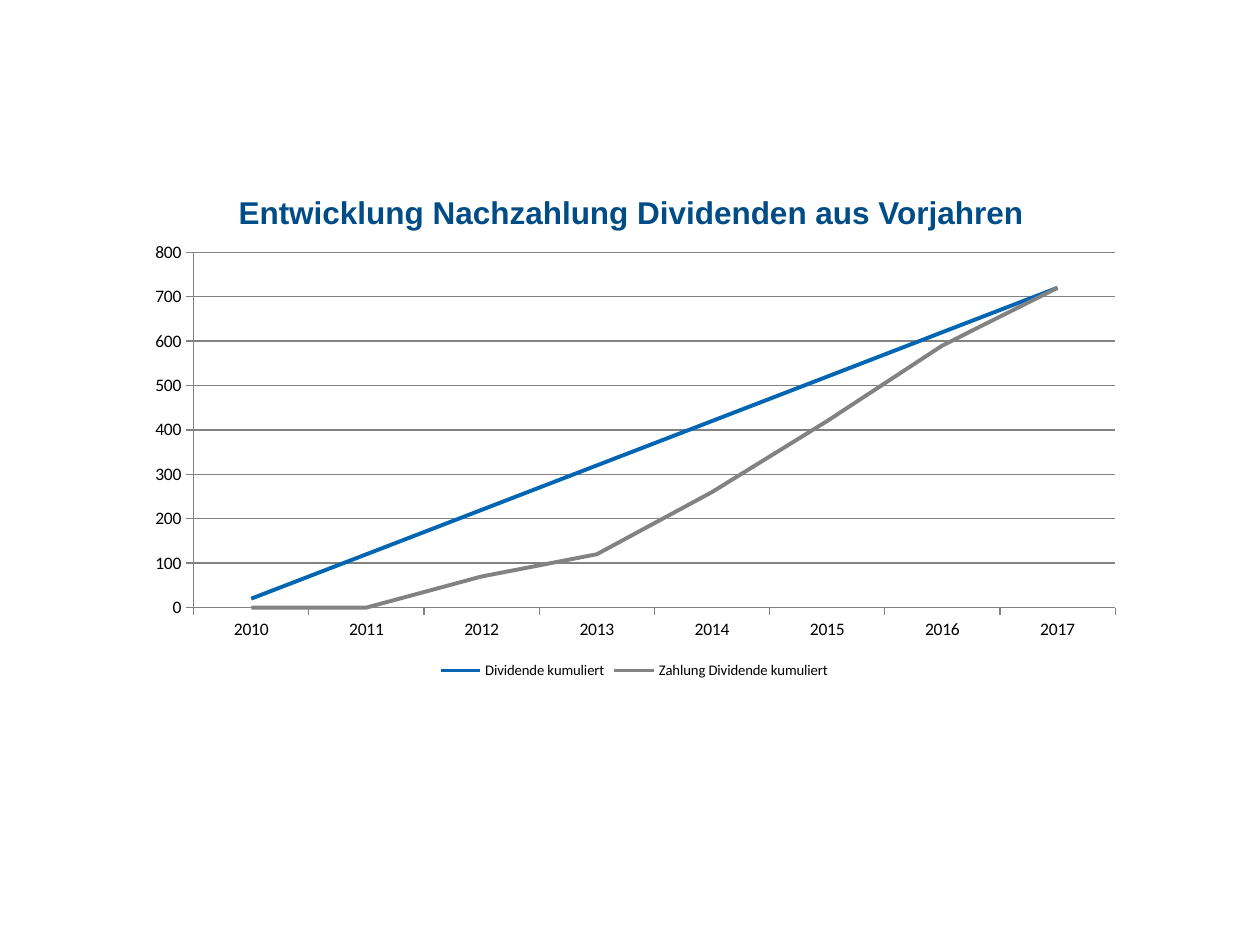
from lxml import etree
from pptx import Presentation
from pptx.chart.data import CategoryChartData
from pptx.dml.color import RGBColor
from pptx.enum.chart import XL_CHART_TYPE, XL_LEGEND_POSITION, XL_TICK_MARK
from pptx.enum.text import PP_ALIGN
from pptx.oxml.ns import qn
from pptx.util import Inches, Pt

LINE = XL_CHART_TYPE.LINE
BOTTOM = XL_LEGEND_POSITION.BOTTOM
OUTSIDE = XL_TICK_MARK.OUTSIDE
CENTER = PP_ALIGN.CENTER

COLORS = {
    "title": "004C86",
    "text": "000000",
    "due": "0066B3",
    "paid": "828282",
    "axis": "828282",
}
YEARS = [str(year) for year in range(2010, 2018)]
SERIES = [
    ("Dividende kumuliert", "due", [20, 120, 220, 320, 420, 520, 620, 720]),
    ("Zahlung Dividende kumuliert", "paid", [0, 0, 70, 120, 260, 420, 590, 720]),
]
PLOT_LAYOUT = {"x": 0.06, "y": 0.04, "w": 0.92, "h": 0.79}


def rgb(name):
    return RGBColor.from_string(COLORS[name])


def set_font(font, size, color="text", name="Calibri", bold=False):
    font.size = Pt(size)
    font.name = name
    font.bold = bold
    font.color.rgb = rgb(color)


def set_line(line, color, width):
    line.color.rgb = rgb(color)
    line.width = Pt(width)


def add_text(slide, text, left, top, width, height, *, spacing=1.0, **font):
    box = slide.shapes.add_textbox(
        Inches(left), Inches(top), Inches(width), Inches(height))
    tf = box.text_frame
    tf.word_wrap = True
    p = tf.paragraphs[0]
    p.alignment = CENTER
    p.line_spacing = spacing
    r = p.add_run()
    r.text = text
    set_font(r.font, **font)


def set_plot_layout(chart, layout):
    """Fix the inner plot area as fractions of the chart."""
    plot_area = chart.plots[0]._element.getparent()
    for old in plot_area.findall(qn("c:layout")):
        plot_area.remove(old)
    element = etree.Element(qn("c:layout"))
    plot_area.insert(0, element)
    manual = etree.SubElement(element, qn("c:manualLayout"))
    settings = {"layoutTarget": "inner", "xMode": "edge", "yMode": "edge", **layout}
    for tag, value in settings.items():
        etree.SubElement(manual, qn(f"c:{tag}")).set("val", str(value))


def style_axis(axis):
    axis.major_tick_mark = OUTSIDE
    set_font(axis.tick_labels.font, 10)
    set_line(axis.format.line, "axis", 0.75)


def add_line_chart(slide, left, top, width, height):
    data = CategoryChartData(number_format="#,##0")
    data.categories = YEARS
    for name, _, values in SERIES:
        data.add_series(name, values)
    chart = slide.shapes.add_chart(
        LINE, Inches(left), Inches(top), Inches(width), Inches(height), data).chart
    set_font(chart.font, 10)
    chart.has_title = False
    chart.has_legend = True
    chart.legend.position = BOTTOM
    chart.legend.include_in_layout = False
    set_font(chart.legend.font, 8.4)

    style_axis(chart.category_axis)
    axis = chart.value_axis
    style_axis(axis)
    axis.minimum_scale, axis.maximum_scale, axis.major_unit = 0, 800, 100
    axis.tick_labels.number_format = "#,##0"
    axis.tick_labels.number_format_is_linked = False
    axis.has_major_gridlines = True
    set_line(axis.major_gridlines.format.line, "axis", 0.75)

    plot = chart.plots[0]
    plot.vary_by_categories = False
    for series, (_, color, _) in zip(plot.series, SERIES):
        series.smooth = False
        set_line(series.format.line, color, 2.25)
    set_plot_layout(chart, PLOT_LAYOUT)


def main():
    prs = Presentation()
    prs.slide_width, prs.slide_height = Inches(10), Inches(7.5)
    slide = prs.slides.add_slide(prs.slide_layouts[6])
    add_text(slide, "Entwicklung Nachzahlung Dividenden aus Vorjahren",
             0.51, 1.55, 9, 4.09, spacing=0.76,
             size=18, color="title", name="Arial", bold=True)
    add_line_chart(slide, 1.06, 1.86, 7.95, 3.57)
    prs.save("out.pptx")


if __name__ == "__main__":
    main()
